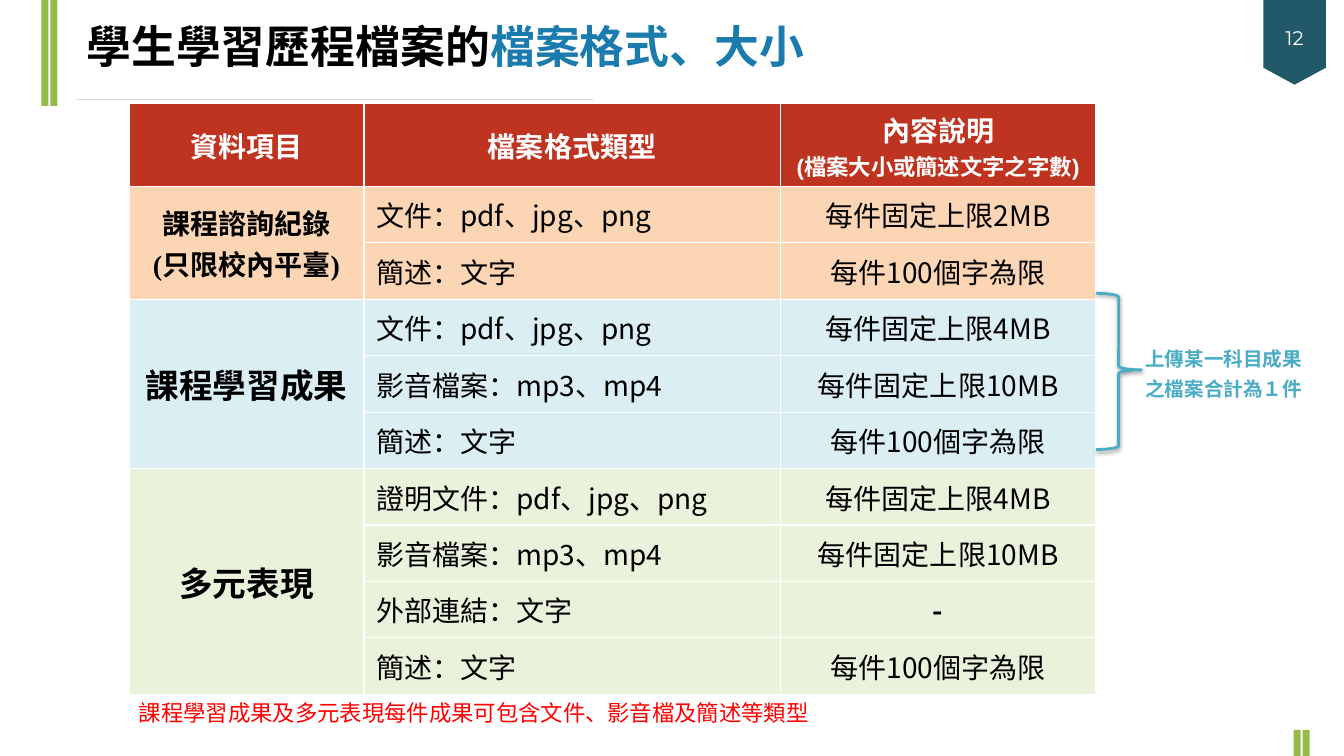
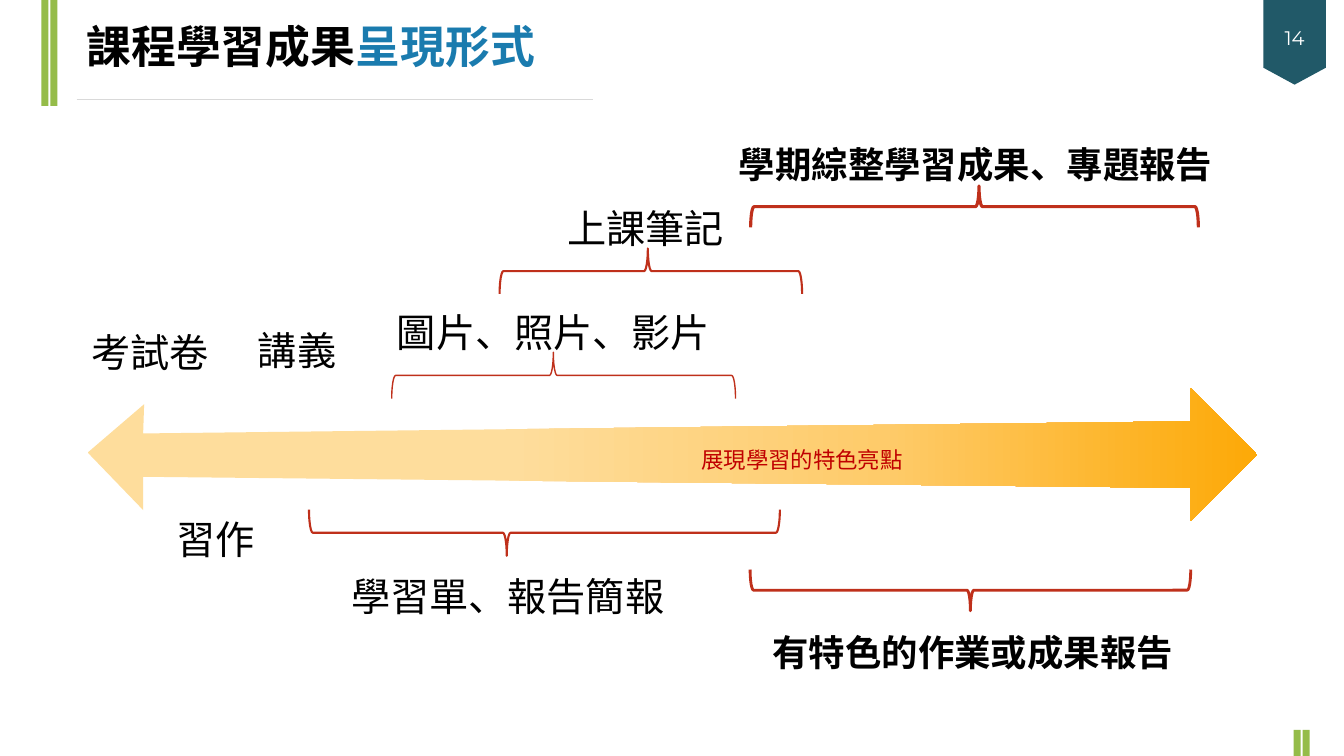
from lxml import etree
from pptx import Presentation
from pptx.dml.color import RGBColor
from pptx.enum.shapes import MSO_CONNECTOR, MSO_SHAPE
from pptx.enum.text import MSO_ANCHOR, MSO_AUTO_SIZE, PP_ALIGN
from pptx.oxml import parse_xml
from pptx.oxml.ns import nsdecls, qn
from pptx.util import Inches, Pt

LEFT, CENTER = PP_ALIGN.LEFT, PP_ALIGN.CENTER
MIDDLE = MSO_ANCHOR.MIDDLE
FIT_SHAPE = MSO_AUTO_SIZE.SHAPE_TO_FIT_TEXT
RECTANGLE = MSO_SHAPE.RECTANGLE
RIBBON = MSO_SHAPE.FLOWCHART_OFFPAGE_CONNECTOR
LEFT_BRACE, RIGHT_BRACE = MSO_SHAPE.LEFT_BRACE, MSO_SHAPE.RIGHT_BRACE
STRAIGHT = MSO_CONNECTOR.STRAIGHT

CJK = "Noto Sans CJK SC"
BLACK, WHITE, GREEN, TEAL = "000000", "FFFFFF", "95BC49", "215968"
BLUE, CYAN, BRICK, GRAY = "1A7BAE", "4BACC6", "BF301B", "D9D9D9"


def write(paragraph, text, size=20, color=BLACK, bold=False, font=CJK,
          align=LEFT, spacing=None, before=0):
    paragraph.alignment = align
    paragraph.space_before = Pt(before)
    if spacing:
        paragraph.line_spacing = spacing
    run = paragraph.add_run()
    run.text = text
    run.font.size = Pt(size)
    run.font.bold = bold
    run.font.name = font
    run.font.color.rgb = RGBColor.from_string(color)
    east_asian = etree.SubElement(run.font._element, qn("a:ea"))
    east_asian.set("typeface", CJK)


def draw(slide, kind, box, fill=None, line=None, width=1):
    shape = slide.shapes.add_shape(kind, *map(Inches, box))
    shape.shadow.inherit = False
    if fill:
        shape.fill.solid()
        shape.fill.fore_color.rgb = RGBColor.from_string(fill)
    else:
        shape.fill.background()
    if line:
        shape.line.color.rgb = RGBColor.from_string(line)
        shape.line.width = Pt(width)
    else:
        shape.line.fill.background()
    return shape


presentation = Presentation()
presentation.slide_width, presentation.slide_height = Inches(13.33), Inches(7.5)

titles = [
    ("12", "學生學習歷程檔案的", "檔案格式、大小"),
    ("14", "課程學習成果", "呈現形式"),
]
bars = [(0.41, 0, 0.07, 1.05), (0.5, 0, 0.07, 1.05),
        (12.83, 7.24, 0.07, 0.26), (12.92, 7.24, 0.07, 0.26)]
slides = []
for number, subject, emphasis in titles:
    slide = presentation.slides.add_slide(presentation.slide_layouts[6])
    slides.append(slide)
    for bar in bars:
        draw(slide, RECTANGLE, bar, fill=GREEN)
    rule = slide.shapes.add_connector(
        STRAIGHT, Inches(0.76), Inches(0.99), Inches(5.88), Inches(0.99))
    rule.line.color.rgb = RGBColor.from_string(GRAY)
    rule.line.width = Pt(0.75)
    etree.SubElement(rule.line._get_or_add_ln().getparent(), qn("a:effectLst"))
    ribbon = draw(slide, RIBBON, (12.53, 0, 0.62, 0.84), fill=TEAL)
    ribbon.text_frame.vertical_anchor = MIDDLE
    write(ribbon.text_frame.paragraphs[0], number, size=14, color=WHITE,
          font="Montserrat", align=CENTER, spacing=1.3)
    title = slide.shapes.add_textbox(
        Inches(0.76), Inches(0.2), Inches(8.67), Inches(0.64))
    title.text_frame.word_wrap = True
    for text, color in ((subject, BLACK), (emphasis, BLUE)):
        write(title.text_frame.paragraphs[0], text, size=32, color=color,
              bold=True, font="Roboto Condensed", spacing=0.9)

formats_slide, forms_slide = slides

headers = [["資料項目"], ["檔案格式類型"], ["內容說明", "(檔案大小或簡述文字之字數)"]]
groups = [
    (["課程諮詢紀錄", "(只限校內平臺)"], 20, "FCD5B5", [
        ("文件：pdf、jpg、png", "每件固定上限2MB"),
        ("簡述：文字", "每件100個字為限")]),
    (["課程學習成果"], 24, "DBEEF4", [
        ("文件：pdf、jpg、png", "每件固定上限4MB"),
        ("影音檔案：mp3、mp4", "每件固定上限10MB"),
        ("簡述：文字", "每件100個字為限")]),
    (["多元表現"], 24, "EAF2DB", [
        ("證明文件：pdf、jpg、png", "每件固定上限4MB"),
        ("影音檔案：mp3、mp4", "每件固定上限10MB"),
        ("外部連結：文字", "-"),
        ("簡述：文字", "每件100個字為限")]),
]
row_count = 1 + sum(len(items) for *_, items in groups)
table = formats_slide.shapes.add_table(
    row_count, 3, Inches(1.28), Inches(1.03), Inches(9.59), Inches(5.82)).table
table.horz_banding = False
for column, width in zip(table.columns, (2.33, 4.13, 3.13)):
    column.width = Inches(width)
for index, row in enumerate(table.rows):
    row.height = Inches(0.56 if index else 0.82)
    for cell in row.cells:
        cell.vertical_anchor = MIDDLE
        cell.margin_left = cell.margin_right = Inches(0.04)
        cell.fill.solid()
        cell.fill.fore_color.rgb = RGBColor.from_string("BF3420")

for column, lines in enumerate(headers):
    frame = table.cell(0, column).text_frame
    for index, line in enumerate(lines):
        paragraph = frame.add_paragraph() if index else frame.paragraphs[0]
        write(paragraph, line, size=16 if index else 20, color=WHITE,
              bold=True, font="Arial", align=CENTER)

first = 1
for names, size, color, items in groups:
    for row, (file_type, limit) in enumerate(items, first):
        for cell in table.rows[row].cells:
            cell.fill.fore_color.rgb = RGBColor.from_string(color)
        type_cell, limit_cell = table.cell(row, 1), table.cell(row, 2)
        type_cell.margin_left = Inches(0.12)
        write(type_cell.text_frame.paragraphs[0], file_type)
        write(limit_cell.text_frame.paragraphs[0], limit,
              bold=limit == "-", align=CENTER)
    group_cell = table.cell(first, 0)
    group_cell.merge(table.cell(first + len(items) - 1, 0))
    frame = group_cell.text_frame
    for index, name in enumerate(names):
        paragraph = frame.add_paragraph() if index else frame.paragraphs[0]
        write(paragraph, name, size=size, bold=True,
              font="Times New Roman", align=CENTER)
    first += len(items)

arrow_points = [(0.87, 4.49), (1.43, 4.01), (1.42, 4.3), (11.81, 4.18),
                (11.81, 3.85), (12.47, 4.51), (11.81, 5.17), (11.81, 4.84),
                (1.42, 4.73), (1.42, 5.06)]
start, *others = [(Inches(x), Inches(y)) for x, y in arrow_points]
builder = forms_slide.shapes.build_freeform(*start)
builder.add_line_segments(others, close=True)
arrow = builder.convert_to_shape()
arrow.shadow.inherit = False
arrow.line.fill.background()
arrow.fill.gradient()
arrow.fill.gradient_angle = 0
stop_list = arrow._element.spPr.find(".//" + qn("a:gsLst"))
for stop in list(stop_list):
    stop_list.remove(stop)
for position, color in ((0, "FEDD9C"), (36, "FEDD9C"), (68, "FECB6A"), (100, "FDA907")):
    stop = etree.SubElement(stop_list, qn("a:gs"), pos=str(position * 1000))
    etree.SubElement(stop, qn("a:srgbClr"), val=color)

labels = [
    (formats_slide, "課程學習成果及多元表現每件成果可包含文件、影音檔及簡述等類型",
     (1.28, 6.81, 7.16, 0.45), False, dict(size=16, color="FF0000")),
    (formats_slide, "上傳某一科目成果之檔案合計為１件",
     (11.26, 3.32, 1.76, 0.71), True, dict(size=14, color=CYAN, bold=True)),
    (forms_slide, "考試卷", (0.81, 3.07, 1.38, 0.65), False, dict(size=28)),
    (forms_slide, "習作", (1.65, 4.92, 0.99, 0.65), False, dict(size=28)),
    (forms_slide, "講義", (2.46, 3.05, 0.99, 0.65), False, dict(size=28)),
    (forms_slide, "學期綜整學習成果、專題報告",
     (7.23, 1.23, 4.97, 0.67), True, dict(size=26, bold=True)),
    (forms_slide, "有特色的作業或成果報告",
     (7.4, 6.07, 4.5, 0.61), True, dict(size=26, bold=True, align=CENTER)),
    (forms_slide, "學習單、報告簡報",
     (2.97, 5.49, 4.13, 0.65), True, dict(size=28, align=CENTER)),
    (forms_slide, "圖片、照片、影片",
     (3.83, 2.87, 3.32, 0.65), True, dict(size=28, align=CENTER)),
    (forms_slide, "上課筆記",
     (5.52, 1.84, 1.77, 0.65), False, dict(size=28, align=CENTER)),
    (forms_slide, "展現學習的特色亮點",
     (6.86, 4.3, 2.22, 0.42), False, dict(size=16, color="C00000")),
]
for slide, text, box, wrap, text_format in labels:
    label = slide.shapes.add_textbox(*map(Inches, box))
    label.text_frame.word_wrap = wrap
    label.text_frame.auto_size = FIT_SHAPE
    write(label.text_frame.paragraphs[0], text, spacing=1.3, before=6, **text_format)

braces = [
    ((5.36, 2.02, 0.46, 3.41), 90, 0.53, 1),
    ((9.42, 3.67, 0.41, 4.37), 270, 0.5, 2),
    ((6.23, 1.19, 0.45, 3), 90, 0.51, 1.5),
    ((5.17, 2.95, 0.46, 4.67), 270, 0.42, 1.5),
    ((9.46, -0.17, 0.41, 4.44), 90, 0.49, 2.25),
]
for box, rotation, tip, width in braces:
    brace = draw(forms_slide, LEFT_BRACE, box, line=BRICK, width=width)
    brace.rotation = rotation
    brace.adjustments[1] = tip

upload_brace = draw(formats_slide, RIGHT_BRACE, (10.87, 2.91, 0.45, 1.55), line=CYAN, width=2)
upload_brace.adjustments[1] = 0.49
effects = upload_brace._element.spPr.find(qn("a:effectLst"))
effects.append(parse_xml(
    f'<a:outerShdw {nsdecls("a")} blurRad="{Pt(3.1)}" dist="{Pt(1.6)}" dir="5400000" '
    'rotWithShape="0"><a:srgbClr val="000000"><a:alpha val="38000"/></a:srgbClr>'
    '</a:outerShdw>'))

presentation.save("out.pptx")
